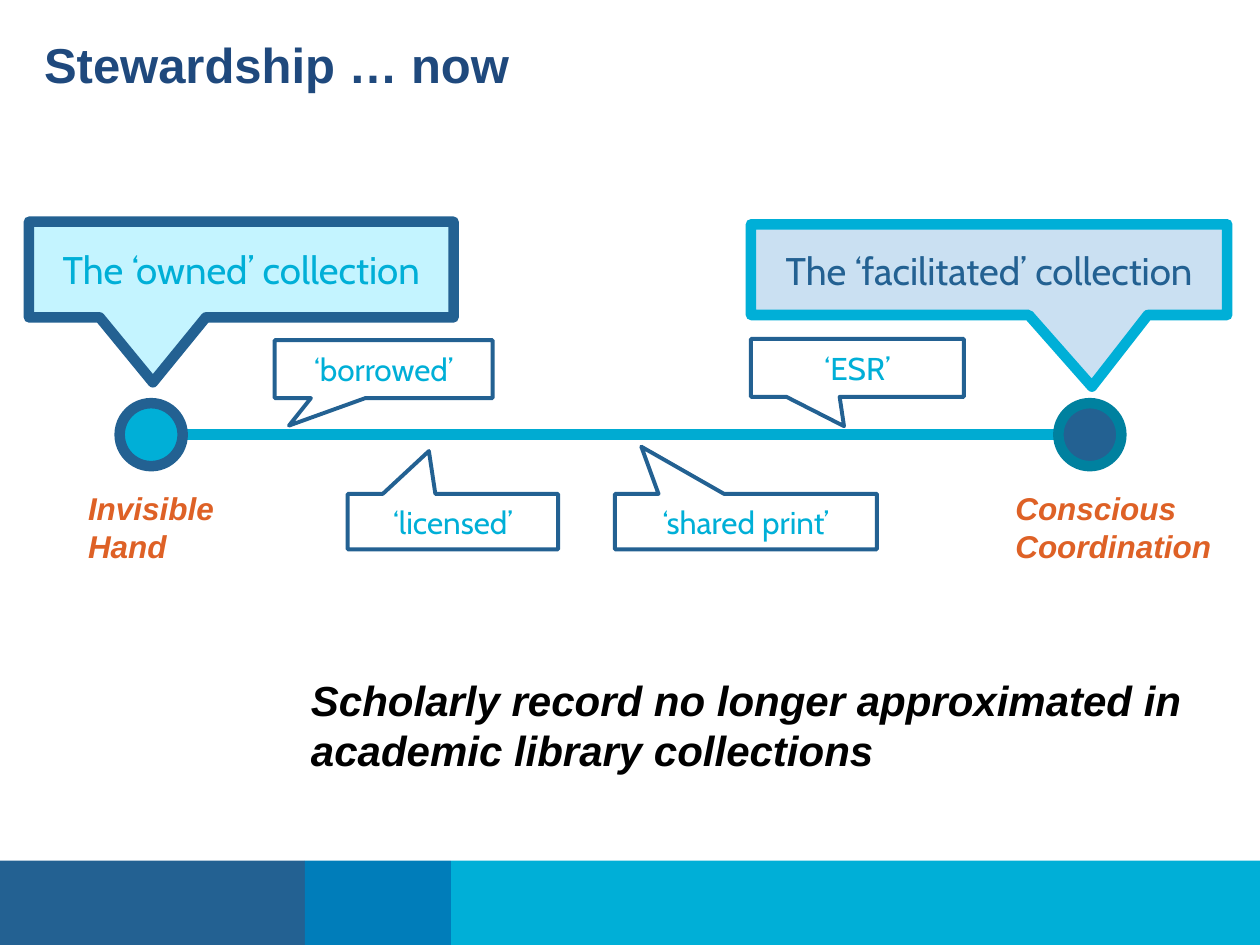
from lxml.etree import SubElement
from pptx import Presentation
from pptx.dml.color import RGBColor
from pptx.enum.shapes import MSO_CONNECTOR, MSO_SHAPE
from pptx.enum.text import MSO_ANCHOR, MSO_AUTO_SIZE, PP_ALIGN
from pptx.oxml.ns import qn
from pptx.util import Pt

NAVY = RGBColor(0x23, 0x61, 0x92)
BLUE = RGBColor(0x00, 0x7D, 0xBA)
CYAN = RGBColor(0x00, 0xAF, 0xD7)
TEAL = RGBColor(0x00, 0x81, 0x9F)
AXIS_CYAN = RGBColor(0x00, 0xAB, 0xD2)
ICE = RGBColor(0xC4, 0xF4, 0xFF)
PALE_BLUE = RGBColor(0xCA, 0xE0, 0xF2)
TITLE_BLUE = RGBColor(0x1F, 0x49, 0x7D)
ORANGE = RGBColor(0xDE, 0x61, 0x26)
WHITE = RGBColor(0xFF, 0xFF, 0xFF)
BLACK = RGBColor(0x00, 0x00, 0x00)

SLIDE_W, SLIDE_H = 720, 540
BAND_H = 48.24
BANDS = [(174.24, NAVY), (83.52, BLUE), (462.24, CYAN)]  # width, colour

TITLE = "Stewardship … now"

AXIS_Y = 248.4
AXIS_START, AXIS_END = 86.4, 614.88
DOT = 36
THICK, THIN = 6, 2.25
ENDPOINTS = [(622.8, NAVY, TEAL), (86.4, CYAN, NAVY)]  # centre x, fill, line

# text, (left, top, width, height), pointer offset as a share of the box
COLLECTIONS = [
    ("The ‘owned’ collection", (16.56, 126.72, 242.64, 54.72), (-0.208, 1.178),
     ICE, NAVY, CYAN),
    ("The ‘facilitated’ collection", (429.12, 128.16, 272.16, 51.84), (0.216, 1.29),
     PALE_BLUE, CYAN, NAVY),
]
STAGES = [
    ("‘borrowed’", (156.96, 194.4, 124.56, 33.12), (-0.434, 0.975)),
    ("‘licensed’", (198.72, 282.24, 120.24, 31.68), (-0.114, -1.272)),
    ("‘ESR’", (429.12, 193.68, 121.68, 33.12), (-0.063, 1.006)),
    ("‘shared print’", (351.36, 282.24, 149.76, 31.68), (-0.399, -1.352)),
]
CAPTIONS = [  # lines, box, size, colour
    (["Conscious", "Coordination"], (573.12, 275.76, 127.44, 51.12), 18, ORANGE),
    (["Invisible", "Hand"], (43.2, 275.76, 87.12, 51.12), 18, ORANGE),
    (["Scholarly record no longer approximated in", "academic library collections"],
     (170.64, 381.6, 516.24, 65.52), 24, BLACK),
]


def points(values):
    return [Pt(value) for value in values]


def style_text(frame, font_name, size, color, bold=False, italic=False):
    for paragraph in frame.paragraphs:
        for run in paragraph.runs:
            font = run.font
            font.name, font.size = font_name, Pt(size)
            font.bold, font.italic = bold, italic
            font.color.rgb = color


def add_filled(slide, preset, box, fill, line=None, line_width=0):
    shape = slide.shapes.add_shape(preset, *points(box))
    shape.shadow.inherit = False
    shape.fill.solid()
    shape.fill.fore_color.rgb = fill
    if line is None:
        shape.line.fill.background()
    else:
        shape.line.color.rgb = line
        shape.line.width = Pt(line_width)
    return shape


def add_callout(slide, text, box, pointer, fill, line, line_width, size, color):
    callout = add_filled(slide, MSO_SHAPE.RECTANGULAR_CALLOUT, box, fill, line, line_width)
    for index, offset in enumerate(pointer):
        callout.adjustments[index] = offset
    frame = callout.text_frame
    frame.text = text
    frame.vertical_anchor = MSO_ANCHOR.MIDDLE
    frame.paragraphs[0].alignment = PP_ALIGN.CENTER
    style_text(frame, "Cabin", size, color)


def add_axis(slide):
    axis = slide.shapes.add_connector(
        MSO_CONNECTOR.STRAIGHT, *points((AXIS_START, AXIS_Y, AXIS_END, AXIS_Y)))
    axis.line.color.rgb = AXIS_CYAN
    axis.line.width = Pt(THICK)
    SubElement(axis._element.spPr, qn("a:effectLst"))
    for center, fill, line in ENDPOINTS:
        box = (center - DOT / 2, AXIS_Y - DOT / 2, DOT, DOT)
        add_filled(slide, MSO_SHAPE.OVAL, box, fill, line, THICK)


def add_caption(slide, lines, box, size, color):
    frame = slide.shapes.add_textbox(*points(box)).text_frame
    frame.word_wrap = False
    frame.auto_size = MSO_AUTO_SIZE.SHAPE_TO_FIT_TEXT
    frame.text = "\n".join(lines)
    style_text(frame, "Arial", size, color, bold=True, italic=True)


def set_title(slide):
    title = slide.shapes.title
    title.left, title.top, title.width, title.height = points((18, 12.96, 648, 50.4))
    frame = title.text_frame
    frame.text = TITLE
    frame.vertical_anchor = MSO_ANCHOR.TOP
    frame.margin_top = Pt(6.5)
    frame.auto_size = MSO_AUTO_SIZE.NONE
    frame.paragraphs[0].alignment = PP_ALIGN.LEFT
    style_text(frame, "Arial", 28, TITLE_BLUE, bold=True)


def main():
    presentation = Presentation()
    presentation.slide_width, presentation.slide_height = Pt(SLIDE_W), Pt(SLIDE_H)
    slide = presentation.slides.add_slide(presentation.slide_layouts.get_by_name("Title Only"))
    set_title(slide)

    left = 0
    for width, color in BANDS:
        add_filled(slide, MSO_SHAPE.RECTANGLE, (left, SLIDE_H - BAND_H, width, BAND_H), color)
        left += width

    add_axis(slide)
    for text, box, pointer, fill, line, color in COLLECTIONS:
        add_callout(slide, text, box, pointer, fill, line, THICK, 22, color)
    for text, box, pointer in STAGES:
        add_callout(slide, text, box, pointer, WHITE, NAVY, THIN, 18, CYAN)
    for caption in CAPTIONS:
        add_caption(slide, *caption)

    presentation.save("out.pptx")


if __name__ == "__main__":
    main()
